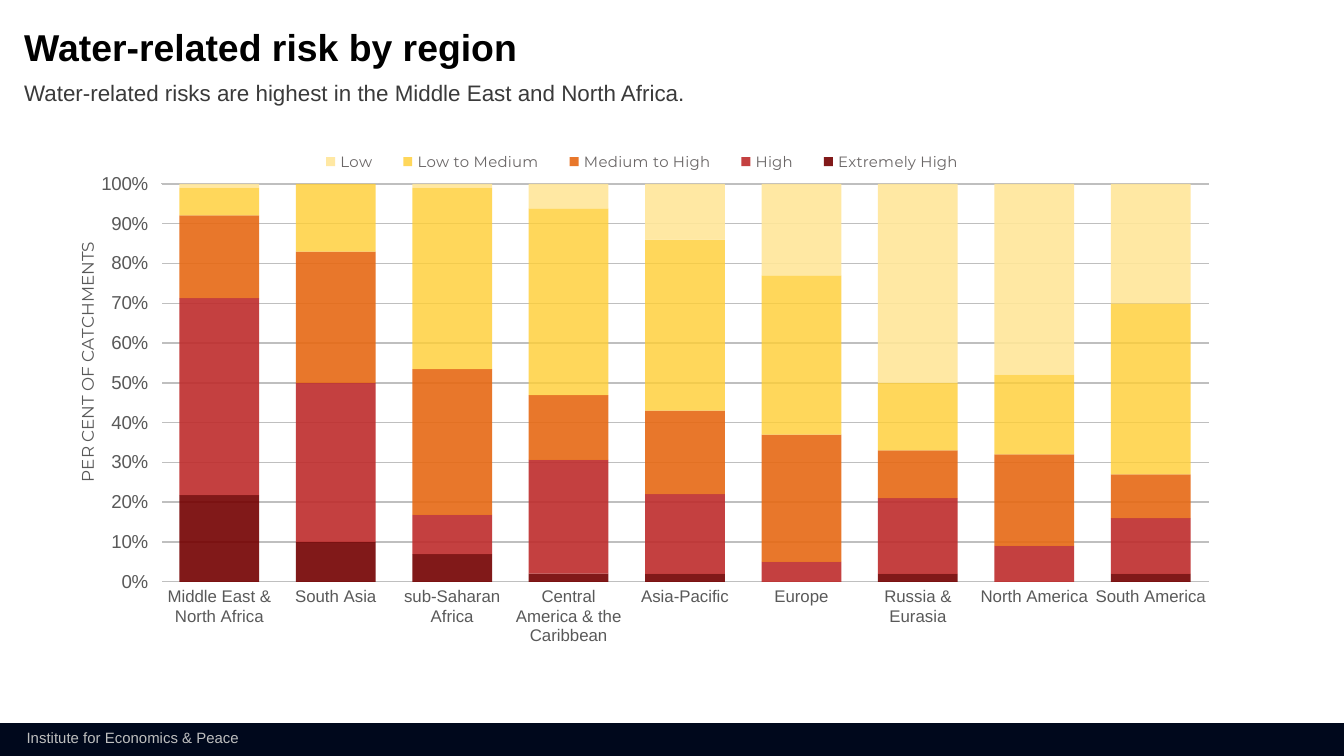
from typing import NamedTuple

from lxml import etree
from pptx import Presentation
from pptx import util as u
from pptx.chart.data import CategoryChartData
from pptx.dml.color import RGBColor
from pptx.enum import chart as ch
from pptx.enum import shapes, text
from pptx.oxml.ns import qn

WIDE = u.Inches(10)
HIGH = WIDE * 9 // 16
NAVY = RGBColor(0x00, 0x08, 0x1C)
BLACK = RGBColor(0x00, 0x00, 0x00)
WHITE = RGBColor(0xFF, 0xFF, 0xFF)
DARK = RGBColor(0x3A, 0x3A, 0x3A)
GREY = RGBColor(0x59, 0x59, 0x59)
WARM = RGBColor(0x6A, 0x66, 0x66)
PALE = RGBColor(0xBF, 0xBF, 0xBF)

REGIONS = ["Middle East & North Africa", "South Asia", "sub-Saharan Africa",
           "Central America & the Caribbean", "Asia-Pacific", "Europe",
           "Russia & Eurasia", "North America", "South America"]


class Box(NamedTuple):
    """Left, top, width and height as shares of the slide's size."""
    x: float
    y: float
    w: float
    h: float


class Risk(NamedTuple):
    name: str
    color: RGBColor
    alpha: int
    values: tuple[int, ...]


RISKS = [
    Risk("Extremely High", RGBColor(0x74, 0x00, 0x00), 90, (22, 10, 7, 2, 2, 0, 2, 0, 2)),
    Risk("High", RGBColor(0xBE, 0x2C, 0x2C), 90, (50, 40, 10, 28, 20, 5, 19, 9, 14)),
    Risk("Medium to High", RGBColor(0xE6, 0x69, 0x14), 90, (21, 33, 37, 16, 21, 32, 12, 23, 11)),
    Risk("Low to Medium", RGBColor(0xFF, 0xCE, 0x33), 80, (7, 17, 46, 46, 43, 40, 17, 20, 43)),
    Risk("Low", RGBColor(0xFF, 0xE6, 0x99), 90, (1, 0, 1, 6, 14, 23, 50, 48, 30)),
]


def inch(x: float, y: float, w: float, h: float) -> Box:
    wide, high = u.Emu(WIDE).inches, u.Emu(HIGH).inches
    return Box(x / wide, y / high, w / wide, h / high)


def scale(box: Box) -> list[int]:
    return [round(part * size) for part, size in zip(box, (WIDE, HIGH) * 2)]


def style(font, size: float, color: RGBColor, name: str = "Arial", bold: bool = False) -> None:
    font.size, font.name, font.bold = u.Pt(size), name, bold
    font.color.rgb = color


def write(shape, box: Box, words: str, size: float, color: RGBColor,
          bold: bool = False, wrap: bool = True) -> None:
    shape.left, shape.top, shape.width, shape.height = scale(box)
    frame = shape.text_frame
    frame.text = words
    frame.word_wrap = wrap
    frame.auto_size = text.MSO_AUTO_SIZE.NONE
    frame.vertical_anchor = text.MSO_ANCHOR.TOP
    if wrap:
        frame.margin_left = frame.margin_top = frame.margin_right = frame.margin_bottom = 0
    para = frame.paragraphs[0]
    para.alignment = text.PP_ALIGN.LEFT
    para.line_spacing = 0.9 if wrap else 1.0
    style(para.runs[0].font, size, color, bold=bold)


def place(part, spot: int, inner: bool = False, **shares: float) -> None:
    """Give a chart part a manual layout, as its child number spot."""
    for old in part.findall(qn("c:layout")):
        part.remove(old)
    layout = etree.Element(qn("c:layout"))
    manual = etree.SubElement(layout, qn("c:manualLayout"))
    marks = {"layoutTarget": "inner"} if inner else {}
    marks |= {"xMode": "edge", "yMode": "edge"} | shares
    for tag, val in marks.items():
        etree.SubElement(manual, qn(f"c:{tag}")).set("val", str(val))
    part.insert(spot, layout)


def line(form, color: RGBColor) -> None:
    form.line.color.rgb = color
    form.line.width = u.Pt(0.75)


def paint(series, risk: Risk) -> None:
    series.invert_if_negative = False
    fill = series.format.fill
    fill.solid()
    fill.fore_color.rgb = risk.color
    tint = series._element.find(".//" + qn("a:srgbClr"))
    etree.SubElement(tint, qn("a:alpha")).set("val", str(risk.alpha * 1000))


def set_axes(chart) -> None:
    cat, val = chart.category_axis, chart.value_axis
    cat.major_tick_mark = cat.minor_tick_mark = ch.XL_TICK_MARK.NONE
    style(cat.tick_labels.font, 9, GREY)
    line(cat.format, PALE)

    val.major_tick_mark, val.minor_tick_mark = ch.XL_TICK_MARK.OUTSIDE, ch.XL_TICK_MARK.NONE
    style(val.tick_labels.font, 10, GREY)
    val.tick_labels.number_format = "0%"
    val.tick_labels.number_format_is_linked = False
    line(val.format, WHITE)
    line(val.major_gridlines.format, PALE)

    title = val.axis_title
    frame = title.text_frame
    frame.text = "PER CENT OF CATCHMENTS"
    style(frame.paragraphs[0].runs[0].font, 9, GREY, "Montserrat")
    body = title._element.find(".//" + qn("a:bodyPr"))
    body.set("rot", "-5400000")
    body.set("vert", "horz")
    place(title._element, 1, x=0.013, y=0.195)


def add_risks(slide, box: Box) -> None:
    data = CategoryChartData()
    data.categories = REGIONS
    for risk in RISKS:
        data.add_series(risk.name, risk.values)
    kind = ch.XL_CHART_TYPE.COLUMN_STACKED_100
    chart = slide.shapes.add_chart(kind, *scale(box), data).chart
    style(chart.font, 10, BLACK, "Calibri")
    chart.has_title = False

    plot = chart.plots[0]
    plot.gap_width, plot.overlap, plot.vary_by_categories = 46, 100, False
    for series, risk in zip(plot.series, RISKS):
        paint(series, risk)
    set_axes(chart)

    chart.has_legend = True
    legend = chart.legend
    legend.position = ch.XL_LEGEND_POSITION.RIGHT
    legend.include_in_layout = False
    style(legend.font, 8, WARM, "Montserrat")
    place(legend._element, 1, x=0.205, y=0.017, w=0.575, h=0.06)
    area = chart._chartSpace.find(".//" + qn("c:plotArea"))
    place(area, 0, inner=True, x=0.088, y=0.09, w=0.881, h=0.763)


def main() -> None:
    deck = Presentation()
    deck.slide_width, deck.slide_height = WIDE, HIGH
    slide = deck.slides.add_slide(deck.slide_layouts[5])
    spot = inch(0, 5.38, 10, 0.25)
    bar = slide.shapes.add_shape(shapes.MSO_SHAPE.RECTANGLE, *scale(spot))
    bar.shadow.inherit = False
    bar.fill.solid()
    bar.fill.fore_color.rgb = NAVY
    bar.line.fill.background()

    spot = inch(0.1, 5.37, 1.8, 0.24)
    write(slide.shapes.add_textbox(*scale(spot)), spot,
          "Institute for Economics & Peace", 8, PALE, wrap=False)
    write(slide.shapes.title, inch(0.18, 0.22, 4.83, 0.3),
          "Water-related risk by region", 20, BLACK, bold=True)
    spot = inch(0.18, 0.61, 6.26, 0.23)
    write(slide.shapes.add_textbox(*scale(spot)), spot,
          "Water-related risks are highest in the Middle East and North Africa.", 12, DARK)
    add_risks(slide, inch(0.42, 1.02, 8.85, 3.88))
    deck.save("out.pptx")


if __name__ == "__main__":
    main()
